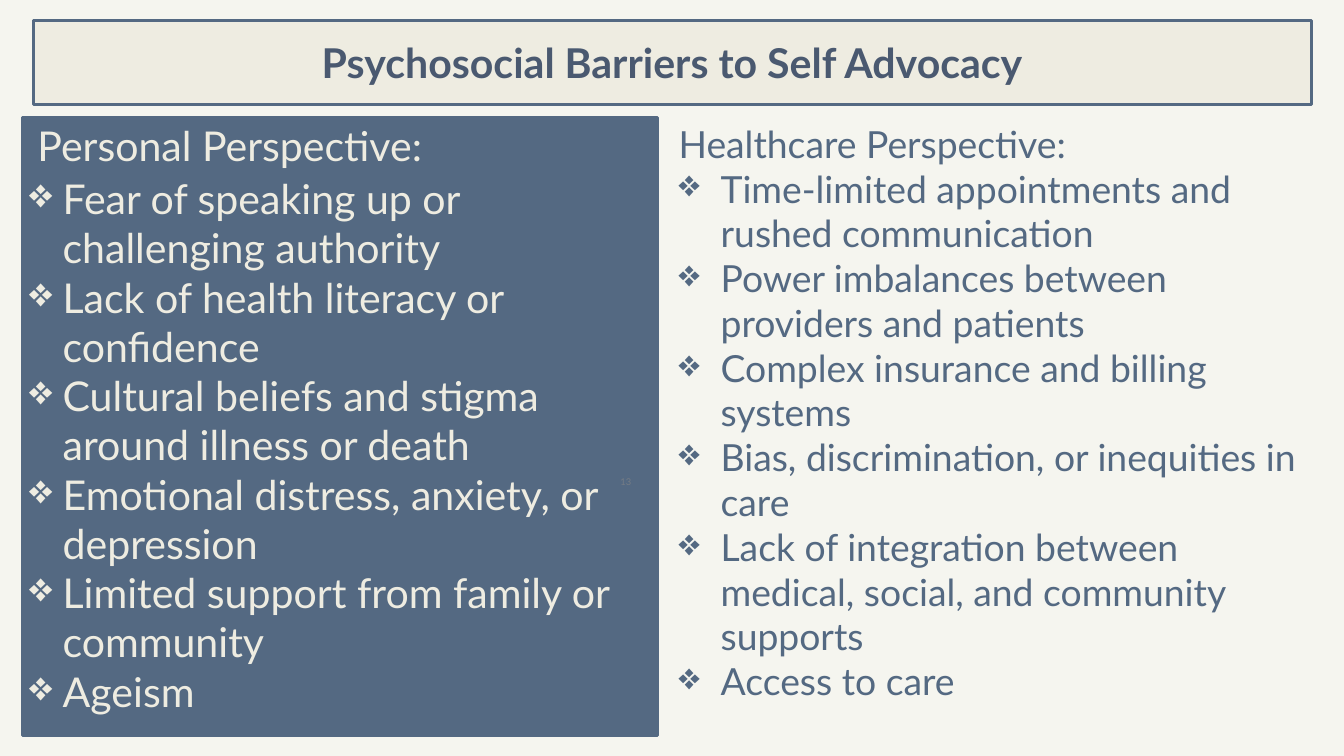
from lxml.etree import SubElement
from pptx import Presentation
from pptx.dml.color import RGBColor
from pptx.enum.shapes import MSO_SHAPE as Shape
from pptx.enum.text import MSO_ANCHOR as Anchor, PP_ALIGN as Align
from pptx.oxml.ns import qn
from pptx.util import Pt

BLUE, CREAM, NAVY, PAPER, GREY = "546982", "EEECE1", "4A5970", "F5F5EF", "757C85"
FONT = "Lato"

PERSONAL = [
    "Fear of speaking up or challenging authority",
    "Lack of health literacy or confidence",
    "Cultural beliefs and stigma around illness or death",
    "Emotional distress, anxiety, or depression",
    "Limited support from family or community",
    "Ageism",
]
CARE = [
    "Time-limited appointments and rushed communication",
    "Power imbalances between providers and patients",
    "Complex insurance and billing systems",
    "Bias, discrimination, or inequities in care",
    "Lack of integration between medical, social, and community supports",
    "Access to care",
]


def color(code):
    return RGBColor.from_string(code)


def write(para, text, size, ink, bold=False, align=Align.LEFT,
          before=0, left=0, hang=0, bullet=None):
    para.alignment = align
    para.space_before = Pt(before)
    props = para._p.get_or_add_pPr()
    props.set("marL", str(Pt(left)))
    props.set("indent", str(Pt(-hang)))
    if bullet:
        tint = SubElement(props, qn("a:buClr"))
        SubElement(tint, qn("a:srgbClr"), val=ink)
        SubElement(props, qn("a:buChar"), char=bullet)
    run = para.add_run()
    run.text = text
    font = run.font
    font.name, font.size, font.bold = FONT, Pt(size), bold
    font.color.rgb = color(ink)


def frame(slide, box, fill=None, anchor=Anchor.TOP):
    """Add a filled panel, or a plain text box, and return its text frame."""
    place = [Pt(v) for v in box]
    if fill:
        shape = slide.shapes.add_shape(Shape.RECTANGLE, *place)
        shape.shadow.inherit = False
        shape.fill.solid()
        shape.fill.fore_color.rgb = color(fill)
        shape.line.color.rgb = color(BLUE)
        shape.line.width = Pt(3)
    else:
        shape = slide.shapes.add_textbox(*place)
    body = shape.text_frame
    body.word_wrap = True
    body.vertical_anchor = anchor
    body.margin_left = body.margin_right = Pt(7.2)
    body.margin_top = body.margin_bottom = Pt(3.6)
    return body


def title(slide, box, text):
    body = frame(slide, box, CREAM, Anchor.MIDDLE)
    write(body.paragraphs[0], text, 44, NAVY, bold=True, align=Align.CENTER)


def column(slide, box, head, items, size, ink, left, hang,
           fill=None, inset=0, before=0):
    """Place a heading with bullets; before spaces the heading and first item."""
    body = frame(slide, box, fill)
    write(body.paragraphs[0], head, size, ink, left=inset, before=before)
    for i, item in enumerate(items):
        write(body.add_paragraph(), item, size, ink, left=left, hang=hang,
              before=0 if i else before, bullet="❖")


def number(slide, box, text):
    body = frame(slide, box, anchor=Anchor.MIDDLE)
    write(body.paragraphs[0], text, 10, GREY, align=Align.CENTER)


def main():
    deck = Presentation()
    deck.slide_width, deck.slide_height = Pt(1440), Pt(810)
    slide = deck.slides.add_slide(deck.slide_layouts[6])
    back = slide.background.fill
    back.solid()
    back.fore_color.rgb = color(PAPER)

    title(slide, (36, 21.6, 1369, 90), "Psychosocial Barriers to Self Advocacy")
    column(slide, (24, 126, 680.4, 662), "Personal Perspective:", PERSONAL,
           44, CREAM, left=36, hang=40.5, fill=BLUE, inset=9, before=3.6)
    column(slide, (720, 126, 680.4, 681), "Healthcare Perspective:", CARE,
           40, BLUE, left=45, hang=45)
    number(slide, (650, 506, 41, 20), "13")
    deck.save("out.pptx")


if __name__ == "__main__":
    main()
